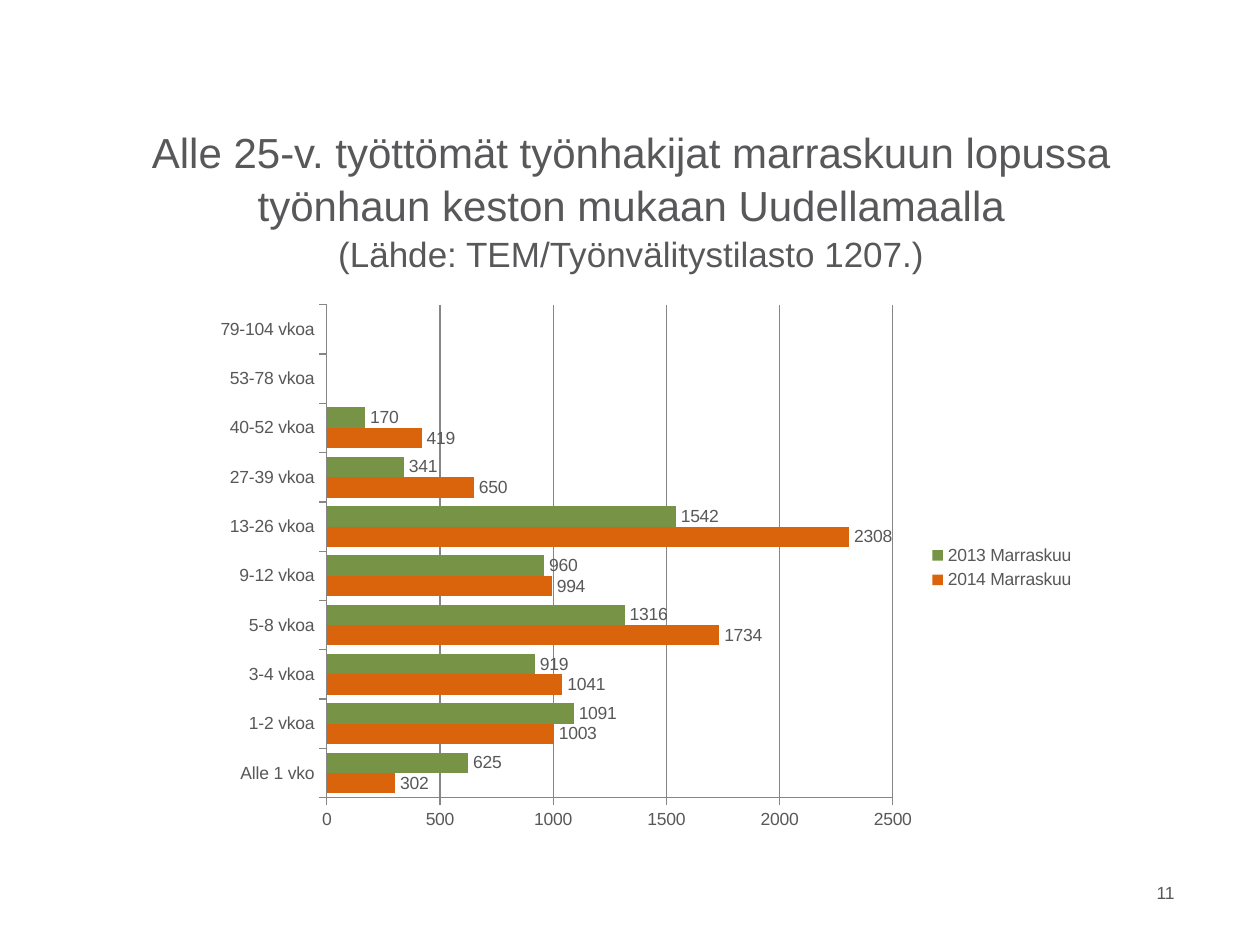
import pptx
import pptx.chart.data
import pptx.dml.color
import pptx.enum.chart
import pptx.enum.text
import pptx.oxml
import pptx.oxml.ns
import pptx.util

Pt = pptx.util.Pt
ALIGN = pptx.enum.text.PP_ALIGN
ANCHOR = pptx.enum.text.MSO_ANCHOR
CHART = pptx.enum.chart
INK, GREY = "58585A", "868686"
CATEGORIES = ["Alle 1 vko", "1-2 vkoa", "3-4 vkoa", "5-8 vkoa", "9-12 vkoa",
              "13-26 vkoa", "27-39 vkoa", "40-52 vkoa", "53-78 vkoa", "79-104 vkoa"]
SERIES = [
    ("2014 Marraskuu", "D9640C", [302, 1003, 1041, 1734, 994, 2308, 650, 419, None, None]),
    ("2013 Marraskuu", "779346", [625, 1091, 919, 1316, 960, 1542, 341, 170, None, None]),
]


def rgb(value):
    """Turn a hex string into a colour."""
    return pptx.dml.color.RGBColor.from_string(value)


def set_attrs(obj, **values):
    """Set each given format value on an object."""
    for name, value in values.items():
        setattr(obj, name, value)


def set_font(font, size):
    """Apply the slide typeface and ink at a size."""
    set_attrs(font, name="Arial", size=Pt(size), bold=False)
    font.color.rgb = rgb(INK)


def place(sp, box):
    """Move a shape to a box given in points."""
    for name, value in zip(("left", "top", "width", "height"), box):
        setattr(sp, name, Pt(value))


def add_title(s, box):
    """Fill the title placeholder with heading and source line."""
    sp = s.shapes.title
    place(sp, box)
    tf = sp.text_frame
    set_attrs(tf, word_wrap=True, vertical_anchor=ANCHOR.MIDDLE,
              auto_size=pptx.enum.text.MSO_AUTO_SIZE.NONE)
    p = tf.paragraphs[0]
    set_attrs(p, alignment=ALIGN.CENTER, line_spacing=1.06, space_before=Pt(0))
    r = p.add_run()
    r.text = "Alle 25-v. työttömät työnhakijat marraskuun lopussa työnhaun keston mukaan Uudellamaalla"
    set_font(r.font, 24)
    p.add_line_break()
    r = p.add_run()
    r.text = "(Lähde: TEM/Työnvälitystilasto 1207.)"
    set_font(r.font, 20)


def add_page_number(s, box):
    """Add the page number in a box."""
    tf = s.shapes.add_textbox(*map(Pt, box)).text_frame
    tf.word_wrap = True
    p = tf.paragraphs[0]
    p.alignment = ALIGN.RIGHT
    r = p.add_run()
    r.text = "11"
    set_font(r.font, 10)


def set_plot_layout(chart, **fractions):
    """Fix the inner plot area as fractions of the chart."""
    area = chart._chartSpace.chart.plotArea
    for old in area.findall(pptx.oxml.ns.qn("c:layout")):
        area.remove(old)
    parts = "".join(f'<c:{k} val="{v}"/>' for k, v in fractions.items())
    area.insert(0, pptx.oxml.parse_xml(
        f'<c:layout {pptx.oxml.ns.nsdecls("c")}><c:manualLayout>'
        '<c:layoutTarget val="inner"/><c:xMode val="edge"/><c:yMode val="edge"/>'
        f'{parts}</c:manualLayout></c:layout>'))


def add_bar_chart(s, box):
    """Add the clustered bar chart of job search durations."""
    data = pptx.chart.data.CategoryChartData()
    data.categories = CATEGORIES
    for name, _, values in SERIES:
        data.add_series(name, values)
    chart = s.shapes.add_chart(
        CHART.XL_CHART_TYPE.BAR_CLUSTERED, *map(Pt, box), data).chart
    set_attrs(chart, has_title=False, has_legend=True)
    set_font(chart.font, 10)
    set_attrs(chart.legend, position=CHART.XL_LEGEND_POSITION.RIGHT,
              include_in_layout=False)
    set_plot_layout(chart, x=0.14, y=0.02, w=0.64, h=0.9)

    plot = chart.plots[0]
    set_attrs(plot, gap_width=42, overlap=0, vary_by_categories=False)
    for series, (_, color, _) in zip(plot.series, SERIES):
        series.format.fill.solid()
        series.format.fill.fore_color.rgb = rgb(color)
        series.invert_if_negative = False
        labels = series.data_labels
        set_attrs(labels, show_value=True, position=CHART.XL_LABEL_POSITION.OUTSIDE_END)
        set_font(labels.font, 10)

    cat, val = chart.category_axis, chart.value_axis
    set_attrs(val, minimum_scale=0, maximum_scale=2500, major_unit=500,
              has_major_gridlines=True)
    for axis in (cat, val):
        axis.major_tick_mark = CHART.XL_TICK_MARK.OUTSIDE
        set_font(axis.tick_labels.font, 10)
    for part in (cat, val, val.major_gridlines):
        part.format.line.color.rgb = rgb(GREY)
        part.format.line.width = Pt(0.75)


def main():
    """Build and save the slide."""
    prs = pptx.Presentation()
    set_attrs(prs, slide_width=Pt(720), slide_height=Pt(540))
    s = prs.slides.add_slide(prs.slide_layouts[5])
    add_title(s, (36.7, 88.6, 648, 50.4))
    add_bar_chart(s, (116, 167.8, 505.4, 313.2))
    add_page_number(s, (646.6, 500.4, 31.7, 28.8))
    prs.save("out.pptx")


if __name__ == "__main__":
    main()
